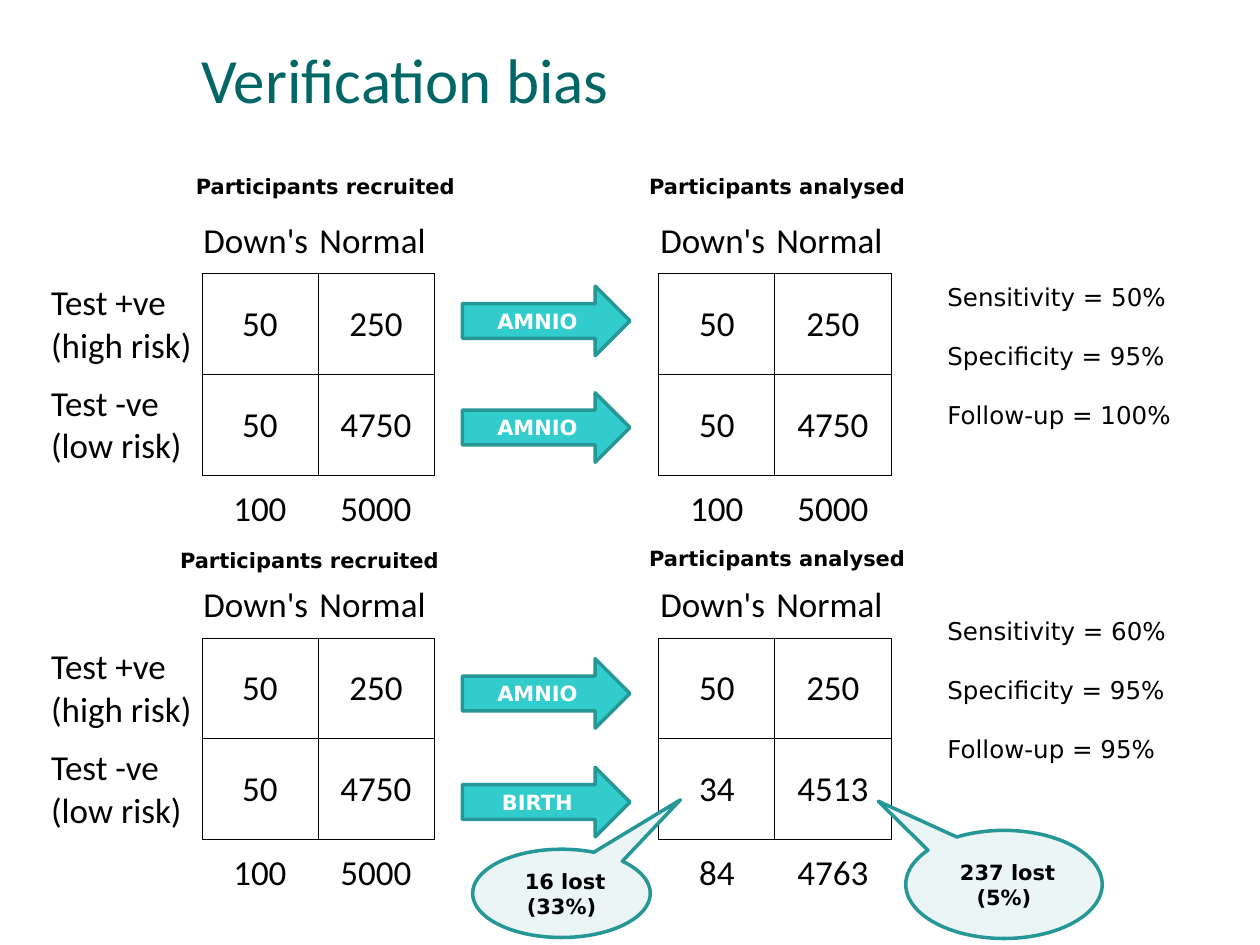
import pptx
import pptx.dml.color
import pptx.enum.shapes
import pptx.enum.text
import pptx.oxml
import pptx.oxml.ns
import pptx.util

Cm = pptx.util.Cm
Pt = pptx.util.Pt
Align = pptx.enum.text.PP_ALIGN
Anchor = pptx.enum.text.MSO_ANCHOR
Shape = pptx.enum.shapes.MSO_SHAPE

SANS = "DejaVu Sans"
PLAIN = "{2D5ABB26-0587-4C30-8999-92F81FD0307C}"
ROWS = [1.35, 2.03, 2.03, 1.35]
SIDE, COL = 3.07, 2.34
HEAD = ["Down's", "Normal"]
NAMES = ["", "Test +ve (high risk)", "Test -ve (low risk)", ""]
FULL = [HEAD, ["50", "250"], ["50", "4750"], ["100", "5000"]]
LOST = [HEAD, ["50", "250"], ["34", "4513"], ["84", "4763"]]


def color(code):
    return pptx.dml.color.RGBColor.from_string(code)


def write(frame, *lines, size=12, font=SANS, ink="000000", bold=False,
          align=Align.LEFT, anchor=Anchor.TOP, gap=0):
    frame.word_wrap = True
    frame.vertical_anchor = anchor
    for index, line in enumerate(lines):
        para = frame.add_paragraph() if index else frame.paragraphs[0]
        para.alignment = align
        para.space_before = Pt(gap if index else 0)
        run = para.add_run()
        run.text = line
        run.font.size = Pt(size)
        run.font.name = font
        run.font.bold = bold
        run.font.color.rgb = color(ink)


def add_text(slide, box, *lines, **style):
    frame = slide.shapes.add_textbox(*map(Cm, box)).text_frame
    write(frame, *lines, **style)
    return frame


def add_shape(slide, kind, box, text, fill, ink):
    shape = slide.shapes.add_shape(kind, *map(Cm, box))
    shape.shadow.inherit = False
    shape.fill.solid()
    shape.fill.fore_color.rgb = color(fill)
    shape.line.color.rgb = color("269797")
    shape.line.width = Pt(2)
    write(shape.text_frame, text, ink=ink, bold=True,
          align=Align.CENTER, anchor=Anchor.MIDDLE)
    return shape


def add_arrow(slide, top, text):
    add_shape(slide, Shape.RIGHT_ARROW, (9.32, top, 3.38, 1.4), text, "33CCCC", "FFFFFF")


def add_bubble(slide, box, text, tip):
    shape = add_shape(slide, Shape.OVAL_CALLOUT, box, text, "EBF5F5", "000000")
    shape.adjustments[0], shape.adjustments[1] = tip


def frame_cell(cell):
    props = cell._tc.get_or_add_tcPr()
    for edge in "LRTB":
        props.append(pptx.oxml.parse_xml(
            f'<a:ln{edge} {pptx.oxml.ns.nsdecls("a")} w="{Pt(0.5)}"><a:solidFill>'
            f'<a:srgbClr val="000000"/></a:solidFill></a:ln{edge}>'))


def fill_cell(cell, text, align):
    cell.fill.background()
    cell.margin_left = cell.margin_right = cell.margin_top = Cm(0.03)
    cell.margin_bottom = 0
    cell.vertical_anchor = Anchor.MIDDLE
    if text:
        write(cell.text_frame, text, size=20, font="Calibri", align=align, anchor=None)


def add_grid(slide, left, top, data, widths):
    box = map(Cm, (left, top, sum(widths), sum(ROWS)))
    table = slide.shapes.add_table(len(data), len(widths), *box).table
    table._tbl.tblPr.find(pptx.oxml.ns.qn("a:tableStyleId")).text = PLAIN
    table.first_row = table.horz_banding = False
    for column, width in zip(table.columns, widths):
        column.width = Cm(width)
    for row, height in zip(table.rows, ROWS):
        row.height = Cm(height)
    side = len(widths) - len(HEAD)
    for y, line in enumerate(data):
        for x, text in enumerate(line):
            cell = table.cell(y, x)
            if y in (1, 2) and x >= side:
                frame_cell(cell)
            fill_cell(cell, text, Align.CENTER if y and x >= side else Align.LEFT)


def add_trial(slide, top, data, arrows, notes, rates):
    sides = [[name, *line] for name, line in zip(NAMES, FULL)]
    add_grid(slide, 1, top, sides, [SIDE, COL, COL])
    add_grid(slide, 13.28, top, data, [COL, COL])
    for y, text in arrows:
        add_arrow(slide, y, text)
    add_text(slide, (18.85, notes, 5.16, 3.25), *rates, size=14, gap=17)


def add_label(slide, left, top, text, align=Align.CENTER):
    add_text(slide, (left, top, 6.76, 0.76), text, bold=True, align=align)


def main():
    deck = pptx.Presentation()
    deck.slide_width, deck.slide_height = Cm(25.4), Cm(19.05)
    slide = deck.slides.add_slide(deck.slide_layouts[6])
    title = add_text(slide, (3.81, 0.84, 20.32, 3.18), "Verification bias", size=36,
                     font="Calibri", ink="006666", anchor=Anchor.BOTTOM)
    title.margin_bottom = Cm(1.68)

    add_trial(slide, 4.17, FULL, [(5.77, "AMNIO"), (7.92, "AMNIO")], 5.56,
              ["Sensitivity = 50%", "Specificity = 95%", "Follow-up = 100%"])
    add_trial(slide, 11.51, LOST, [(13.28, "AMNIO"), (15.47, "BIRTH")], 12.29,
              ["Sensitivity = 60%", "Specificity = 95%", "Follow-up = 95%"])

    add_bubble(slide, (9.53, 17.12, 3.58, 1.78), " 16 lost (33%)", (0.67, -1.06))
    add_bubble(slide, (18.26, 16.74, 3.96, 2.18), " 237 lost (5%)", (-0.64, -0.77))

    add_label(slide, 3.18, 3.38, "Participants recruited")
    add_label(slide, 3.38, 10.92, "Participants recruited", Align.LEFT)
    for top in (3.38, 10.87):
        add_label(slide, 12.29, top, "Participants analysed")
    deck.save("out.pptx")


if __name__ == "__main__":
    main()
